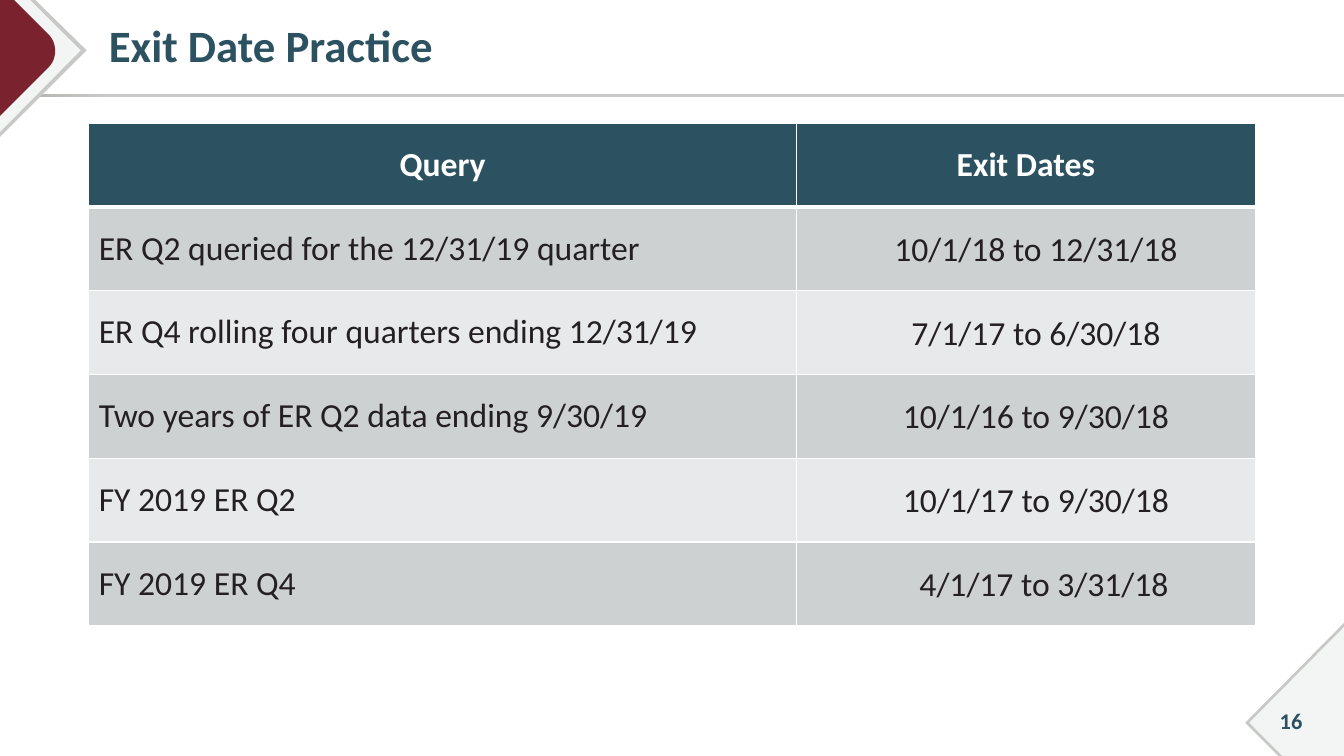
from lxml import etree
from pptx import Presentation
from pptx.dml.color import RGBColor
from pptx.enum.shapes import MSO_SHAPE
from pptx.enum.text import MSO_ANCHOR, PP_ALIGN
from pptx.oxml.ns import qn
from pptx.util import Inches, Pt

RECT = MSO_SHAPE.RECTANGLE
MIDDLE, TOP = MSO_ANCHOR.MIDDLE, MSO_ANCHOR.TOP
LEFT, CENTER = PP_ALIGN.LEFT, PP_ALIGN.CENTER

WHITE = RGBColor(0xFF, 0xFF, 0xFF)
TEAL = RGBColor(0x2C, 0x52, 0x61)
INK = RGBColor(0x24, 0x20, 0x21)
MAROON = RGBColor(0x7A, 0x23, 0x2F)
EDGE = RGBColor(0xC8, 0xC8, 0xC6)
EDGE_DARK = RGBColor(0xAB, 0xAB, 0xA8)
PALE = RGBColor(0xF3, 0xF4, 0xF4)
BAND_DARK = RGBColor(0xCD, 0xD1, 0xD2)
BAND_LIGHT = RGBColor(0xE8, 0xE9, 0xEA)

W, H = 13.33, 7.5

prs = Presentation()
prs.slide_width, prs.slide_height = Inches(W), Inches(H)
s = prs.slides.add_slide(prs.slide_layouts[6])


def write(tf, text, size, color, bold, align):
    tf.word_wrap = True
    p = tf.paragraphs[0]
    p.text = text
    p.alignment = align
    p.font.name, p.font.size = "Calibri", Pt(size)
    p.font.bold, p.font.color.rgb = bold, color
    return p


def add_text(box, text, size, color, bold, align, anchor):
    tf = s.shapes.add_textbox(*map(Inches, box)).text_frame
    tf.vertical_anchor = anchor
    write(tf, text, size, color, bold, align)
    return tf


# Rule under the title
sp = s.shapes.add_shape(RECT, 0, Inches(0.93), Inches(W), Inches(0.03))
sp.shadow.inherit = False
sp.line.fill.background()
sp.fill.gradient()
sp.fill.gradient_angle = 0
for stop, position, color in zip(sp.fill.gradient_stops, (0, 0.08), (EDGE_DARK, EDGE)):
    stop.position, stop.color.rgb = position, color

# Corner ornaments; the maroon tip is rounded along a cubic curve
curve = [(0.48, 0.34), (0.57, 0.43), (0.57, 0.58), (0.48, 0.67)]
tip = []
for i in range(13):
    t = i / 12
    weights = ((1 - t) ** 3, 3 * t * (1 - t) ** 2, 3 * t ** 2 * (1 - t), t ** 3)
    tip.append(tuple(sum(w * c[axis] for w, c in zip(weights, curve)) for axis in (0, 1)))

ornaments = [
    (EDGE, [(0, 0), (0.35, 0), (0.86, 0.5), (0, 1.36)]),
    (PALE, [(0, 0), (0.3, 0), (0.8, 0.5), (0, 1.31)]),
    (MAROON, [(0, 0), (0.14, 0), *tip, (0, 1.15)]),
    (EDGE, [(W, 6.18), (W, H), (12.68, H), (12.35, 7.17)]),
    (PALE, [(W, 6.22), (W, H), (12.72, H), (12.39, 7.17)]),
]
for color, points in ornaments:
    points = [(Inches(x), Inches(y)) for x, y in points]
    builder = s.shapes.build_freeform(*points[0])
    builder.add_line_segments(points[1:], close=True)
    sp = builder.convert_to_shape()
    sp.shadow.inherit = False
    sp.fill.solid()
    sp.fill.fore_color.rgb = color
    sp.line.fill.background()

# Slide number and title
add_text((12.45, 6.95, 0.71, 0.4), "16", 16, TEAL, True, CENTER, MIDDLE)
tf = add_text((0.88, 0.05, 12.12, 0.86), "Exit Date Practice", 32, TEAL, True, LEFT, MIDDLE)
tf.margin_left = Inches(0.2)
tf.paragraphs[0].line_spacing = 0.9

# Query table; the dates lie over its second column
rows = [
    ("Query", "Exit Dates"),
    ("ER Q2 queried for the 12/31/19 quarter", ""),
    ("ER Q4 rolling four quarters ending 12/31/19", ""),
    ("Two years of ER Q2 data ending 9/30/19", ""),
    ("FY 2019 ER Q2", ""),
    ("FY 2019 ER Q4", ""),
]
frame = s.shapes.add_table(len(rows), 2, Inches(0.88), Inches(1.22), Inches(11.57), Inches(4.99))
table = frame.table
for column, width in zip(table.columns, (7.02, 4.55)):
    column.width = Inches(width)
for i, row in enumerate(rows):
    header = i == 0
    fill = TEAL if header else (BAND_LIGHT, BAND_DARK)[i % 2]
    for j, text in enumerate(row):
        cell = table.cell(i, j)
        cell.vertical_anchor = MIDDLE
        write(cell.text_frame, text, 24, WHITE if header else INK, header,
              CENTER if header else LEFT)
        tcPr = cell._tc.get_or_add_tcPr()
        for side in ("lnL", "lnR", "lnT", "lnB"):
            thick = (header and side == "lnB") or (i == 1 and side == "lnT")
            ln = etree.SubElement(tcPr, qn("a:" + side), w=str(Pt(3 if thick else 1)))
            solid = etree.SubElement(ln, qn("a:solidFill"))
            etree.SubElement(solid, qn("a:srgbClr"), val=str(WHITE))
        cell.fill.solid()
        cell.fill.fore_color.rgb = fill

# Exit dates, one per body row
dates = [
    (8.49, "10/1/18 to 12/31/18"),
    (8.49, "7/1/17 to 6/30/18"),
    (8.49, "10/1/16 to 9/30/18"),
    (8.49, "10/1/17 to 9/30/18"),
    (8.57, "4/1/17 to 3/31/18"),
]
row_step = 4.99 / len(rows)
for i, (x, text) in enumerate(dates):
    add_text((x, 2.21 + i * row_step, 3.57, 0.5), text, 24, INK, False, CENTER, TOP)

prs.save("out.pptx")
